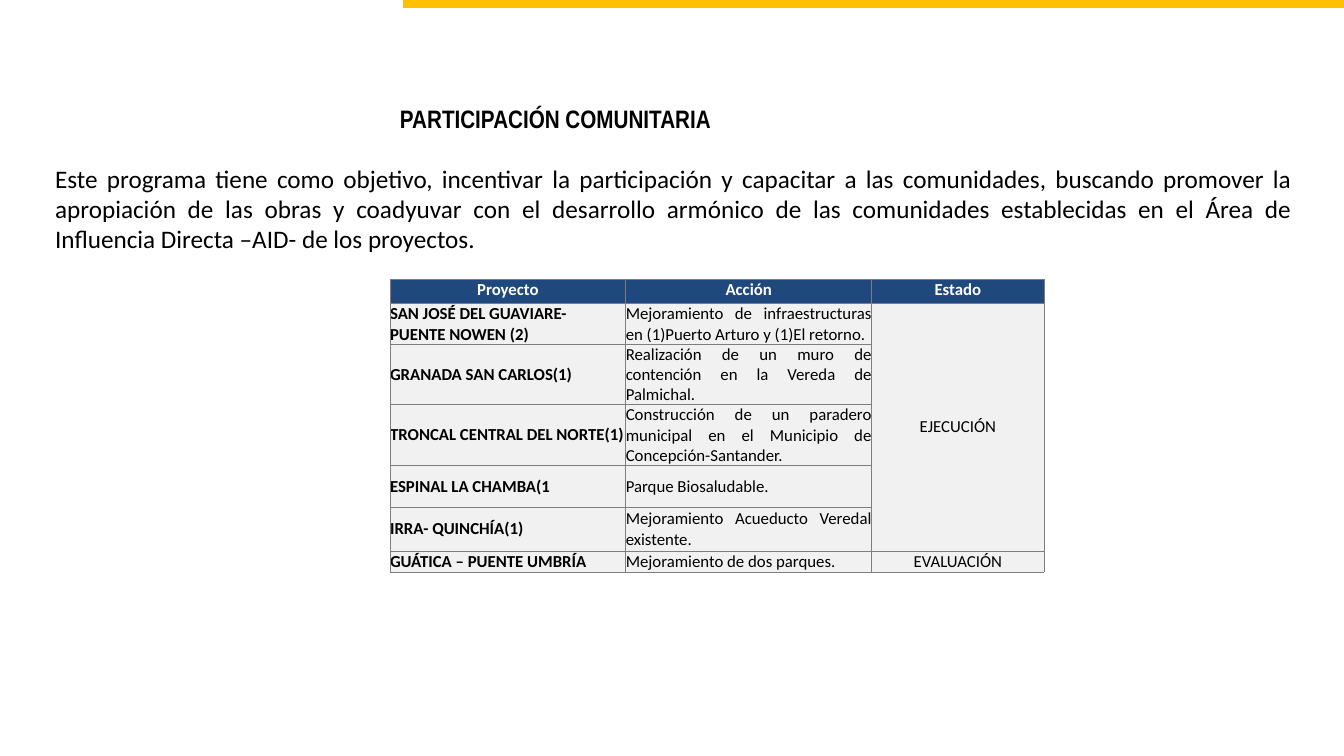
"""Build the community participation slide with its project table."""
from lxml import etree
from pptx import Presentation
from pptx import util as u
from pptx.dml.color import RGBColor
from pptx.enum import shapes, text
from pptx.oxml.ns import qn

GOLD = RGBColor(0xFF, 0xC0, 0x00)
NAVY = RGBColor(0x1F, 0x48, 0x7C)
PALE = RGBColor(0xF1, 0xF1, 0xF1)
GREY = RGBColor(0x7E, 0x7E, 0x7E)
WHITE = RGBColor(0xFF, 0xFF, 0xFF)
BLACK = RGBColor(0x00, 0x00, 0x00)
LEFT, CENTER, JUSTIFY = text.PP_ALIGN.LEFT, text.PP_ALIGN.CENTER, text.PP_ALIGN.JUSTIFY


def write(tf, words, align, color, **font):
    p = tf.paragraphs[0]
    p.alignment = align
    r = p.add_run()
    r.text = words
    r.font.color.rgb = color
    for name, value in font.items():
        setattr(r.font, name, value)


def add_borders(cell):
    tcPr = cell._tc.get_or_add_tcPr()
    for i, edge in enumerate(("a:lnL", "a:lnR", "a:lnT", "a:lnB")):
        ln = etree.Element(qn(edge), w=str(u.Pt(0.5)))
        fill = etree.SubElement(ln, qn("a:solidFill"))
        etree.SubElement(fill, qn("a:srgbClr"), val=str(GREY))
        tcPr.insert(i, ln)


prs = Presentation()
prs.slide_width, prs.slide_height = u.Cm(33.87), u.Cm(19.05)
s = prs.slides.add_slide(prs.slide_layouts[6])

bar = s.shapes.add_shape(shapes.MSO_SHAPE.RECTANGLE, u.Cm(10.16), 0, u.Cm(23.71), u.Cm(0.2))
bar.shadow.inherit = False
bar.fill.solid()
bar.fill.fore_color.rgb = GOLD
bar.line.fill.background()

TEXTS = [
    ((1.14, 3.99, 31.67, 2.57), JUSTIFY, {"name": "Calibri", "bold": False},
     "Este programa tiene como objetivo, incentivar la participación y capacitar a las "
     "comunidades, buscando promover la apropiación de las obras y coadyuvar con el "
     "desarrollo armónico de las comunidades establecidas en el Área de Influencia "
     "Directa –AID- de los proyectos."),
    ((9.83, 2.49, 17.86, 1.02), LEFT, {"name": "Arial Narrow", "bold": True},
     "PARTICIPACIÓN COMUNITARIA"),
]
for box, align, font, words in TEXTS:
    tf = s.shapes.add_textbox(*map(u.Cm, box)).text_frame
    tf.word_wrap = True
    write(tf, words, align, BLACK, size=u.Pt(18), **font)

COLUMNS = [5.94, 6.2, 4.34]
HEIGHTS = [0.61, 1.02, 1.52, 1.52, 1.07, 1.09, 0.53]
ROWS = [
    ("Proyecto", "Acción", "Estado"),
    ("SAN JOSÉ DEL GUAVIARE- PUENTE NOWEN (2)",
     "Mejoramiento de infraestructuras en (1)Puerto Arturo y (1)El retorno.", "EJECUCIÓN"),
    ("GRANADA SAN CARLOS(1)",
     "Realización de un muro de contención en la Vereda de Palmichal.", ""),
    ("TRONCAL CENTRAL DEL NORTE(1)",
     "Construcción de un paradero municipal en el Municipio de Concepción-Santander.", ""),
    ("ESPINAL LA CHAMBA(1", "Parque Biosaludable.", ""),
    ("IRRA- QUINCHÍA(1)", "Mejoramiento Acueducto Veredal existente.", ""),
    ("GUÁTICA – PUENTE UMBRÍA", "Mejoramiento de dos parques.", "EVALUACIÓN"),
]
CELL = {"margin_left": 0, "margin_right": 0, "margin_top": 0, "margin_bottom": 0}

table = s.shapes.add_table(len(ROWS), len(COLUMNS), u.Cm(9.83), u.Cm(7.04),
                           u.Cm(sum(COLUMNS)), u.Cm(sum(HEIGHTS))).table
for column, width in zip(table.columns, COLUMNS):
    column.width = u.Cm(width)
for i, (height, words) in enumerate(zip(HEIGHTS, ROWS)):
    table.rows[i].height = u.Cm(height)
    header = i == 0
    for j, align in enumerate((LEFT, JUSTIFY, CENTER)):
        cell = table.cell(i, j)
        for name, value in CELL.items():
            setattr(cell, name, value)
        cell.vertical_anchor = text.MSO_ANCHOR.TOP if header else text.MSO_ANCHOR.MIDDLE
        cell.fill.solid()
        cell.fill.fore_color.rgb = NAVY if header else PALE
        add_borders(cell)
        if words[j]:
            write(cell.text_frame, words[j], CENTER if header else align,
                  WHITE if header else BLACK,
                  name="Calibri", size=u.Pt(12), bold=header or j == 0)
        else:
            cell.text_frame.paragraphs[0].font.size = u.Pt(12)
table.cell(1, 2).merge(table.cell(5, 2))

prs.save("out.pptx")
